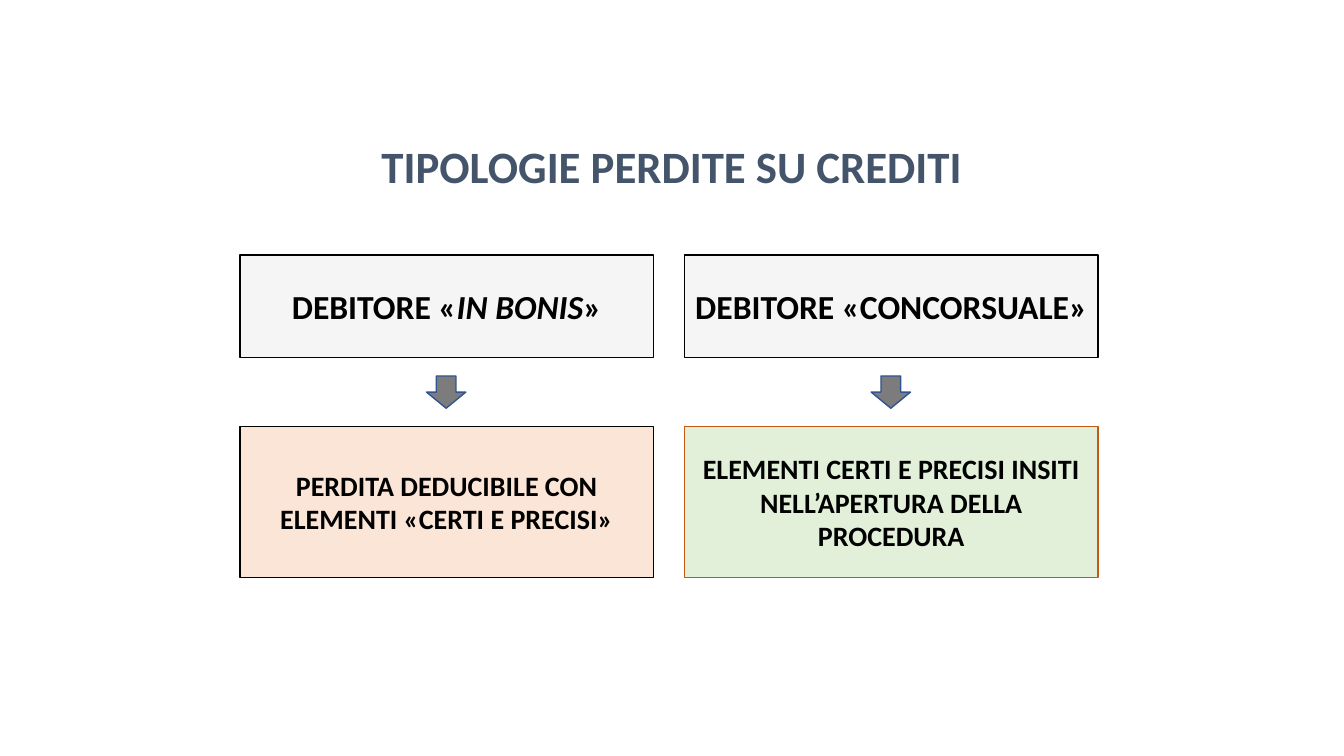
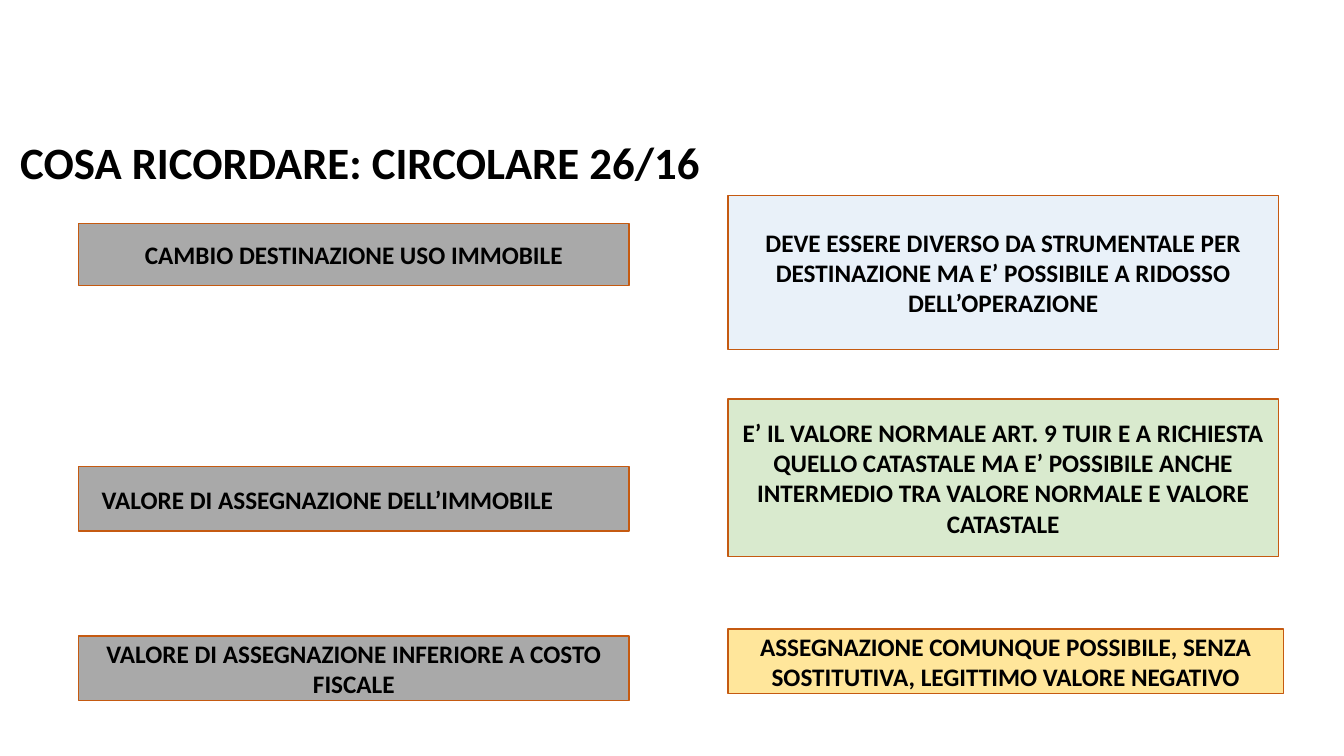
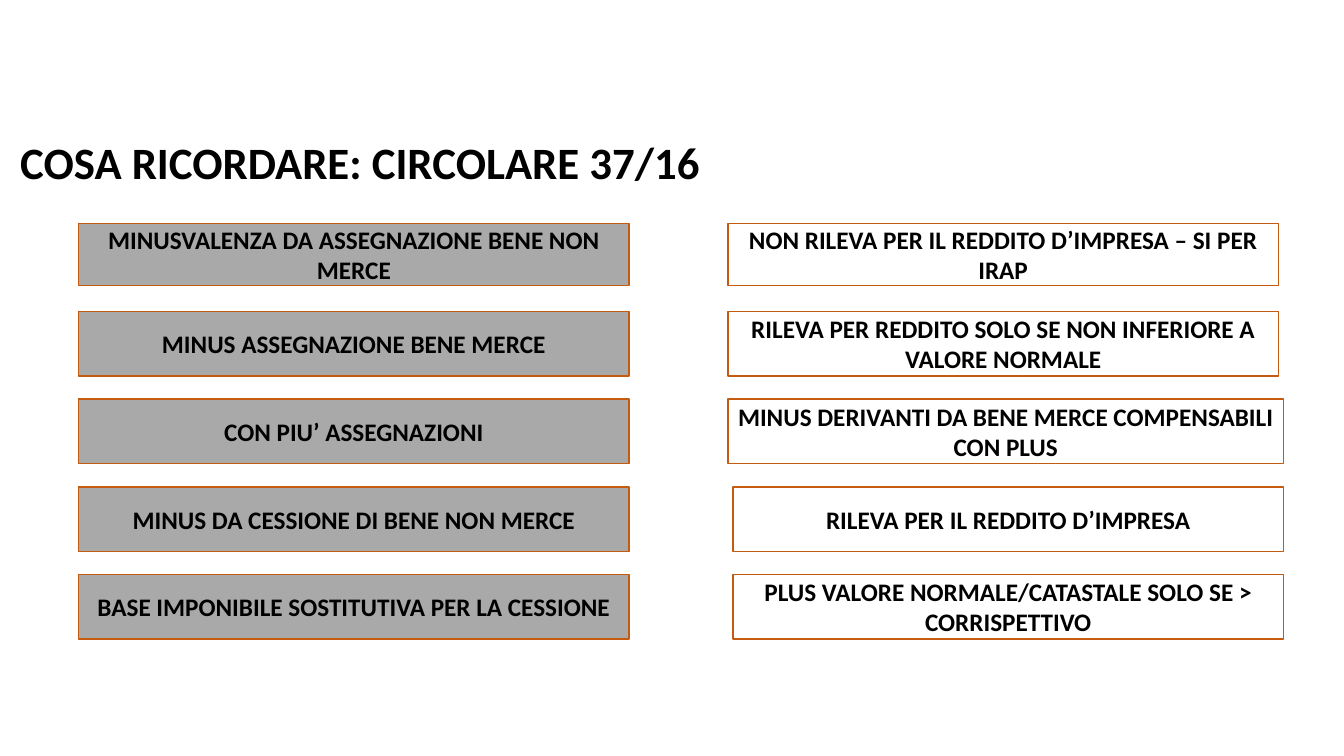
from lxml import etree
from pptx import Presentation
from pptx.dml.color import RGBColor
from pptx.enum import shapes, text
from pptx.oxml import ns
from pptx.util import Inches, Pt

FONT = "Calibri"
BLACK = RGBColor(0x00, 0x00, 0x00)
WHITE = RGBColor(0xFF, 0xFF, 0xFF)
SLATE = RGBColor(0x44, 0x54, 0x6A)
GRAY = RGBColor(0x7C, 0x7C, 0x7C)
PALE = RGBColor(0xF5, 0xF5, 0xF5)
PEACH = RGBColor(0xFB, 0xE5, 0xD6)
MINT = RGBColor(0xE2, 0xF0, 0xD9)
GREEN = RGBColor(0xC5, 0xE0, 0xB4)
SKY = RGBColor(0xDE, 0xEB, 0xF7)
GOLD = RGBColor(0xFF, 0xD9, 0x66)
RUST = RGBColor(0xC5, 0x5A, 0x11)
BLUE = RGBColor(0x32, 0x54, 0x91)

LEFT, RIGHT, WIDE = 0.78, 7.22, 5.46
CENTER, START = text.PP_ALIGN.CENTER, text.PP_ALIGN.LEFT


def write(frame, runs, size, color=BLACK, align=CENTER):
    frame.word_wrap = True
    frame.vertical_anchor = text.MSO_ANCHOR.MIDDLE
    para = frame.paragraphs[0]
    para.alignment = align
    for words, slant in runs:
        run = para.add_run()
        run.text = words
        font = run.font
        font.name, font.size, font.bold = FONT, Pt(size), True
        font.italic = slant
        font.color.rgb = color
    return para


def add_title(slide, words, color=BLACK, align=START):
    box = slide.shapes.add_textbox(Inches(0), Inches(1.34), Inches(13.33), Inches(0.6))
    if align == START:
        box.text_frame.margin_left = Inches(0.2)
    para = write(box.text_frame, [(words, False)], 32, color, align)
    para.line_spacing = 0.9 if align == START else 1.0


def add_form(slide, kind, at, fill, line):
    form = slide.shapes.add_shape(kind, *map(Inches, at))
    form.shadow.inherit = False
    form.fill.solid()
    form.fill.fore_color.rgb = fill
    form.line.color.rgb = line
    form.line.width = Pt(1)
    return form


def add_box(slide, at, runs, size, fill, line):
    box = add_form(slide, shapes.MSO_SHAPE.RECTANGLE, at, fill, line)
    write(box.text_frame, runs, size)
    return box


def add_note(slide, at, words, fill):
    note = add_box(slide, at, [(words, False)], 18, fill, RUST)
    tint = note.fill._xPr.find(".//" + ns.qn("a:srgbClr"))
    etree.SubElement(tint, ns.qn("a:alpha")).set("val", "65000")
    return note


def add_types(slide):
    add_title(slide, "TIPOLOGIE PERDITE SU CREDITI", SLATE, CENTER)
    cols = [
        ([("DEBITORE «", False), ("IN BONIS", True), ("»", False)],
         "PERDITA DEDUCIBILE CON ELEMENTI «CERTI E PRECISI»", PEACH, BLACK),
        ([("DEBITORE «CONCORSUALE»", False)],
         "ELEMENTI CERTI E PRECISI INSITI NELL’APERTURA DELLA PROCEDURA", MINT, RUST),
    ]
    for col, (head, body, fill, line) in enumerate(cols):
        x = 2.38 + col * 4.41
        add_box(slide, (x, 2.53, 4.1, 1.02), head, 24, PALE, BLACK)
        add_form(slide, shapes.MSO_SHAPE.DOWN_ARROW, (x + 1.85, 3.73, 0.39, 0.32), GRAY, BLUE)
        add_box(slide, (x, 4.23, 4.1, 1.5), [(body, False)], 20, fill, line)


def add_uses(slide):
    add_title(slide, "COSA RICORDARE: CIRCOLARE 26/16")
    add_note(slide, (LEFT, 2.22, WIDE, 0.61), "CAMBIO DESTINAZIONE USO IMMOBILE", GRAY)
    value = add_note(slide, (LEFT, 4.63, WIDE, 0.64), "VALORE DI ASSEGNAZIONE DELL’IMMOBILE", GRAY)
    value.text_frame.margin_right = Inches(0.62)
    add_note(slide, (LEFT, 6.31, WIDE, 0.64), "VALORE DI ASSEGNAZIONE INFERIORE A COSTO FISCALE", GRAY)
    add_note(slide, (RIGHT, 1.94, WIDE, 1.53),
             "DEVE ESSERE DIVERSO DA STRUMENTALE PER DESTINAZIONE "
             "MA E’ POSSIBILE A RIDOSSO DELL’OPERAZIONE", SKY)
    add_note(slide, (RIGHT, 3.96, WIDE, 1.56),
             "E’ IL VALORE NORMALE ART. 9 TUIR E A RICHIESTA QUELLO CATASTALE "
             "MA E’ POSSIBILE ANCHE INTERMEDIO TRA VALORE NORMALE E VALORE CATASTALE", GREEN)
    add_note(slide, (RIGHT, 6.24, 5.51, 0.64),
             "ASSEGNAZIONE COMUNQUE POSSIBILE, SENZA SOSTITUTIVA, LEGITTIMO VALORE NEGATIVO", GOLD)


def add_rules(slide):
    add_title(slide, "COSA RICORDARE: CIRCOLARE 37/16")
    rows = [
        ("MINUSVALENZA DA ASSEGNAZIONE BENE NON MERCE",
         "NON RILEVA PER IL REDDITO D’IMPRESA – SI PER IRAP", RIGHT, WIDE),
        ("MINUS ASSEGNAZIONE BENE MERCE",
         "RILEVA PER REDDITO SOLO SE NON INFERIORE A VALORE NORMALE", RIGHT, WIDE),
        ("CON PIU’ ASSEGNAZIONI",
         "MINUS DERIVANTI DA BENE MERCE COMPENSABILI CON PLUS", RIGHT, 5.51),
        ("MINUS DA CESSIONE DI BENE NON MERCE",
         "RILEVA PER IL REDDITO D’IMPRESA", 7.27, WIDE),
        ("BASE IMPONIBILE SOSTITUTIVA PER LA CESSIONE",
         "PLUS VALORE NORMALE/CATASTALE SOLO SE > CORRISPETTIVO", 7.27, WIDE),
    ]
    for row, (case, rule, x, width) in enumerate(rows):
        y = 2.22 + row * 0.87
        high = 0.64 if row else 0.61
        add_note(slide, (LEFT, y, WIDE, high), case, GRAY)
        add_note(slide, (x, y, width, high), rule, WHITE)


def main():
    deck = Presentation()
    deck.slide_width, deck.slide_height = Inches(13.33), Inches(7.5)
    for build in (add_types, add_uses, add_rules):
        build(deck.slides.add_slide(deck.slide_layouts[6]))
    deck.save("out.pptx")


if __name__ == "__main__":
    main()
